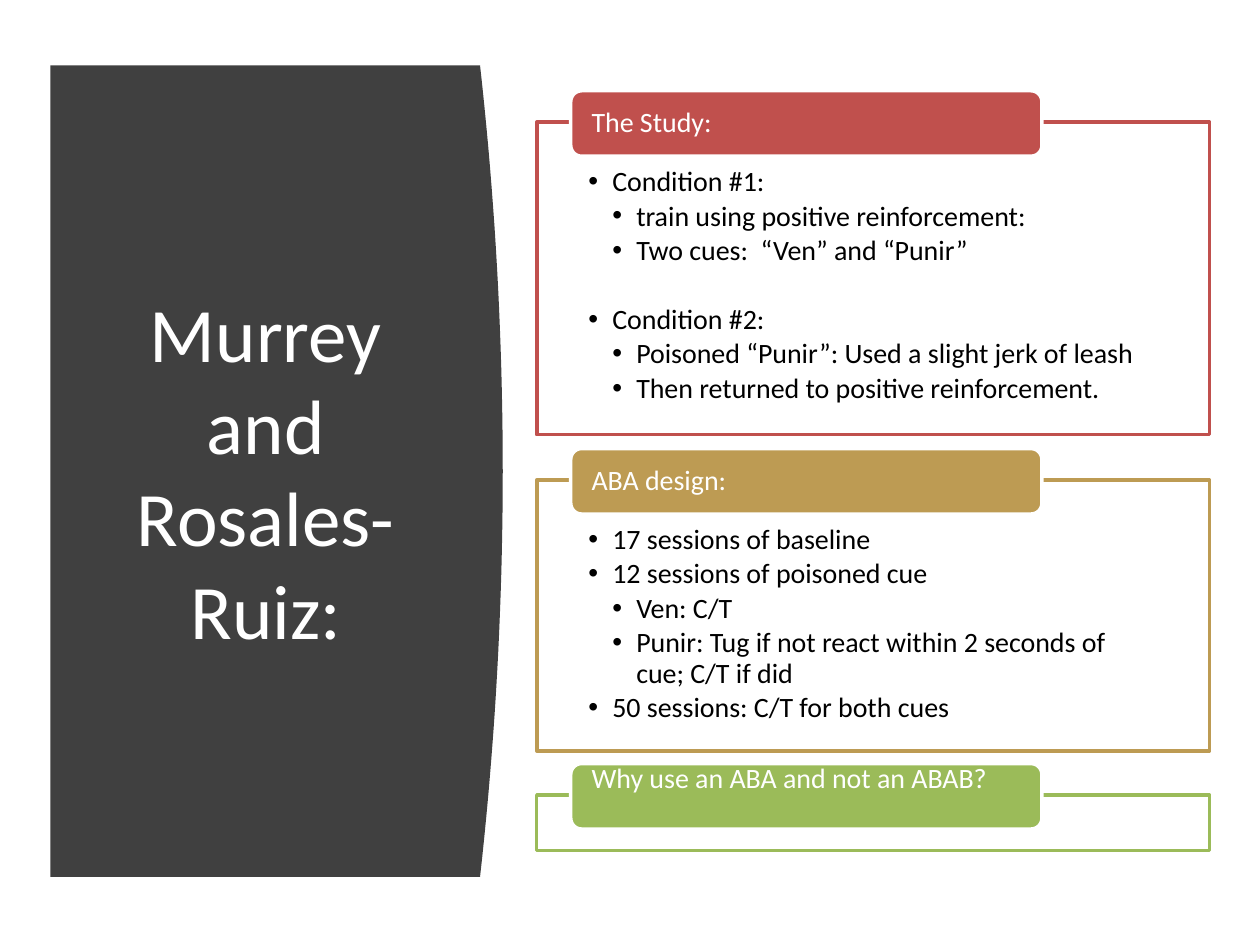
"""Build a slide with a curved title panel and three tabbed study sections."""
from dataclasses import dataclass

from lxml import etree
from pptx import Presentation
from pptx.dml.color import RGBColor
from pptx.enum.shapes import MSO_SHAPE
from pptx.enum.text import MSO_ANCHOR, MSO_AUTO_SIZE, PP_ALIGN
from pptx.oxml.ns import qn
from pptx.util import Inches, Pt

RECTANGLE, ROUNDED = MSO_SHAPE.RECTANGLE, MSO_SHAPE.ROUNDED_RECTANGLE
TOP, MIDDLE = MSO_ANCHOR.TOP, MSO_ANCHOR.MIDDLE
LEFT, CENTER = PP_ALIGN.LEFT, PP_ALIGN.CENTER
NO_AUTOFIT = MSO_AUTO_SIZE.NONE

COLORS = {
    "panel": "404040", "white": "FFFFFF", "black": "000000",
    "red": "C0504D", "gold": "BD9B53", "green": "9BBB59",
}
FONT = "Calibri"
TWO_CONTENT_LAYOUT = 3
FRAME_LEFT, FRAME_WIDTH = 4.26, 5.34
TAB_LEFT, TAB_WIDTH, TAB_HEIGHT = 4.53, 3.74, 0.52
TAB_RISE = 0.25
INDENT = 0.19


@dataclass
class Item:
    text: str
    level: int = 0
    gap_before: float = 0


@dataclass
class Section:
    heading: str
    color: str
    top: float
    height: float
    items: tuple = ()
    heading_bottom_inset: float = 0


SECTIONS = (
    Section("The Study:", "red", 0.97, 2.48, (
        Item("Condition #1:"),
        Item("train using positive reinforcement:", 1),
        Item("Two cues:  “Ven” and “Punir”", 1),
        Item("Condition #2:", gap_before=19.7),
        Item("Poisoned “Punir”: Used a slight jerk of leash", 1),
        Item("Then returned to positive reinforcement.", 1),
    )),
    Section("ABA design:", "gold", 3.81, 2.15, (
        Item("17 sessions of baseline"),
        Item("12 sessions of poisoned cue"),
        Item("Ven: C/T", 1),
        Item("Punir: Tug if not react within 2 seconds of cue; C/T if did", 1),
        Item("50 sessions: C/T for both cues"),
    )),
    Section("Why use an ABA and not an ABAB?", "green", 6.31, 0.44,
            heading_bottom_inset=0.27),
)


def rgb(name: str) -> RGBColor:
    return RGBColor.from_string(COLORS[name])


def place(box, left: float, top: float, width: float, height: float) -> None:
    box.left, box.top = Inches(left), Inches(top)
    box.width, box.height = Inches(width), Inches(height)


def paint(box, fill: str, line: str) -> None:
    box.fill.solid()
    box.fill.fore_color.rgb = rgb(fill)
    box.line.color.rgb = rgb(line)
    box.line.width = Pt(2)


def set_frame(box, insets: tuple, anchor) -> None:
    frame = box.text_frame
    frame.word_wrap = True
    frame.auto_size = NO_AUTOFIT
    frame.vertical_anchor = anchor
    (frame.margin_left, frame.margin_top,
     frame.margin_right, frame.margin_bottom) = map(Inches, insets)


def write(box, text: str, *, size: float = 16, color: str = "black",
          align=LEFT, spacing: float = 0.9, before: float = 0,
          after: float = 0, level: int = 0, bullet: bool = False) -> None:
    frame = box.text_frame
    para = frame.paragraphs[0] if not frame.text else frame.add_paragraph()
    para.alignment, para.level = align, level
    para.line_spacing = spacing
    para.space_before, para.space_after = Pt(before), Pt(after)
    span = para.add_run()
    span.text = text
    span.font.name, span.font.size = FONT, Pt(size)
    span.font.color.rgb = rgb(color)
    if bullet:
        properties = para._p.get_or_add_pPr()
        properties.set("marL", str(Inches(INDENT * (level + 1))))
        properties.set("indent", str(-Inches(INDENT)))
        etree.SubElement(properties, qn("a:buChar"), char="•")


def draw_panel(page) -> None:
    left, edge, bulge, top, bottom, steps = 0.4, 3.81, 0.18, 0.52, 6.96, 40
    curve = []
    for step in range(steps + 1):
        share = step / steps
        curve.append((edge + bulge * (1 - (2 * share - 1) ** 2),
                      top + (bottom - top) * share))
    builder = page.shapes.build_freeform(
        Inches(left), Inches(top), scale=1.0)
    builder.add_line_segments(
        [(Inches(x), Inches(y)) for x, y in curve + [(left, bottom)]])
    panel = builder.convert_to_shape()
    panel.shadow.inherit = False
    panel.fill.solid()
    panel.fill.fore_color.rgb = rgb("panel")
    panel.line.fill.background()
    page.shapes._spTree.insert(2, panel._element)


def draw_title(page) -> None:
    title = page.shapes.title
    place(title, 0.71, 1.11, 2.8, 5.24)
    set_frame(title, (0.1, 0.05, 0.1, 0.05), MIDDLE)
    write(title, "Murrey and Rosales-Ruiz:", size=44, color="white",
          align=CENTER, spacing=1.0)


def draw_section(page, section: Section, frame_box) -> None:
    place(frame_box, FRAME_LEFT, section.top, FRAME_WIDTH, section.height)
    paint(frame_box, "white", section.color)
    color_node = frame_box._element.spPr.find(
        f"{qn('a:solidFill')}/{qn('a:srgbClr')}")
    etree.SubElement(color_node, qn("a:alpha"), val="90000")
    set_frame(frame_box, (0.41, 0.36, 0.41, 0.12), TOP)
    for item in section.items:
        write(frame_box, item.text, before=item.gap_before, after=2.4,
              level=item.level, bullet=True)

    tab = page.shapes.add_shape(
        ROUNDED, Inches(TAB_LEFT), Inches(section.top - TAB_RISE),
        Inches(TAB_WIDTH), Inches(TAB_HEIGHT))
    tab.shadow.inherit = False
    paint(tab, section.color, "white")
    set_frame(tab, (0.14, 0, 0.14, section.heading_bottom_inset), MIDDLE)
    write(tab, section.heading, color="white")


def main() -> None:
    deck = Presentation()
    deck.slide_width, deck.slide_height = Inches(10), Inches(7.5)
    page = deck.slides.add_slide(deck.slide_layouts[TWO_CONTENT_LAYOUT])
    draw_panel(page)
    draw_title(page)
    bodies = [box for box in page.placeholders
              if box.placeholder_format.idx in (1, 2)]
    plain = page.shapes.add_shape(RECTANGLE, 0, 0, 0, 0)
    plain.shadow.inherit = False
    for section, frame_box in zip(SECTIONS, bodies + [plain]):
        draw_section(page, section, frame_box)
    deck.save("out.pptx")


if __name__ == "__main__":
    main()
